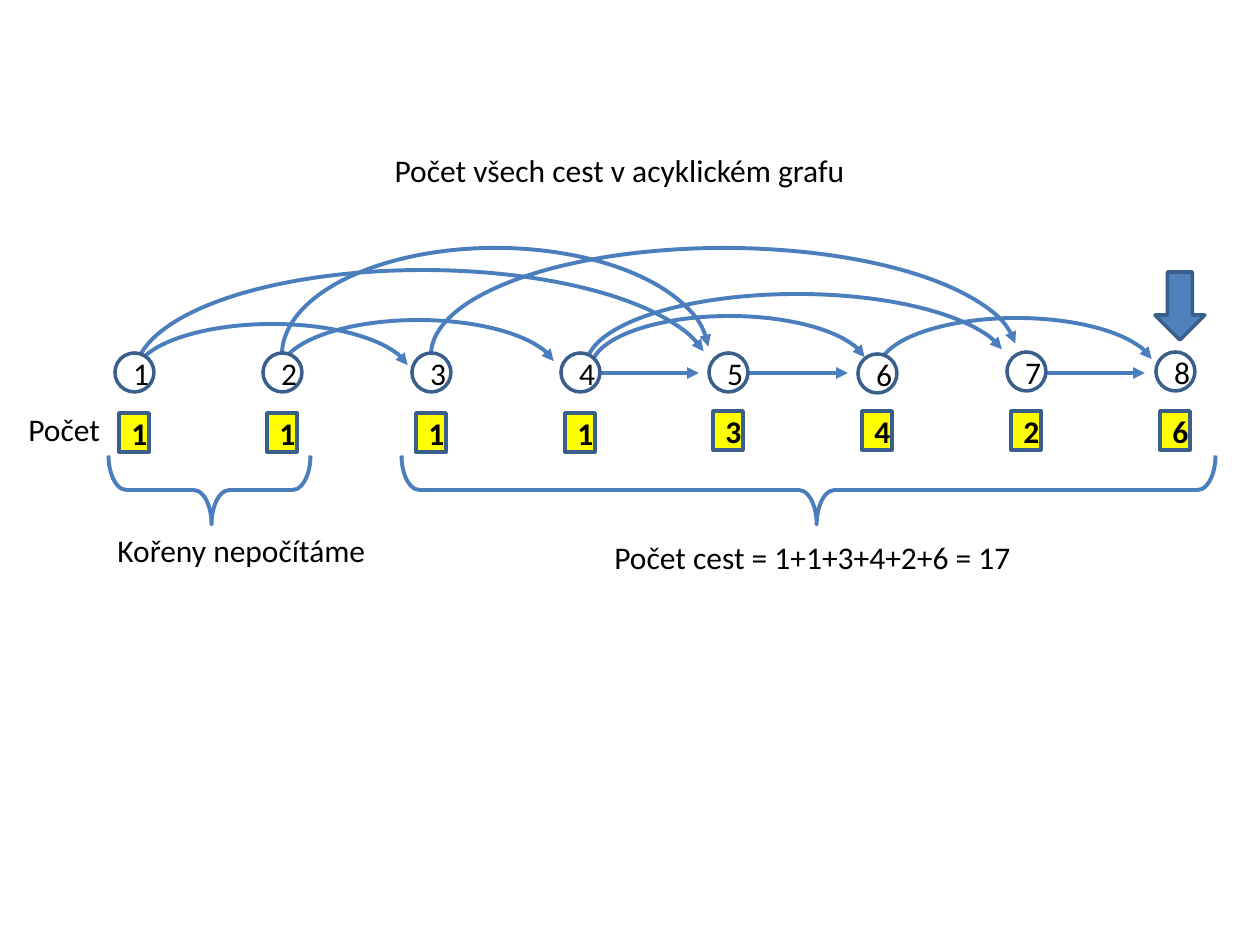
"""Build a slide that counts all paths in an acyclic graph."""
from lxml import etree
from pptx import Presentation
from pptx import util as u
from pptx.dml.color import RGBColor
from pptx.enum import shapes, text
from pptx.oxml import ns

SCALE = 914400 / 126
BLACK = RGBColor(0x00, 0x00, 0x00)
WHITE = RGBColor(0xFF, 0xFF, 0xFF)
YELLOW = RGBColor(0xFF, 0xFF, 0x00)
BLUE = RGBColor(0x4F, 0x81, 0xBD)
EDGE_BLUE = RGBColor(0x4B, 0x7E, 0xBC)
OUTLINE_BLUE = RGBColor(0x3A, 0x5F, 0x8C)
KIND = shapes.MSO_SHAPE


def write(shape, words, bold=False, align=text.PP_ALIGN.LEFT,
          anchor=text.MSO_ANCHOR.TOP, wrap=False):
    frame = shape.text_frame
    frame.word_wrap = wrap
    frame.vertical_anchor = anchor
    if not wrap:
        frame.auto_size = text.MSO_AUTO_SIZE.SHAPE_TO_FIT_TEXT
    paragraph = frame.paragraphs[0]
    paragraph.alignment = align
    run = paragraph.add_run()
    run.text = words
    run.font.name = "Calibri"
    run.font.size = u.Pt(18)
    run.font.bold = bold
    run.font.color.rgb = BLACK


def add_shape(kind, box, fill=None, line=OUTLINE_BLUE, width=2):
    shape = slide.shapes.add_shape(kind, *[round(n * SCALE) for n in box])
    shape.shadow.inherit = False
    if fill is None:
        shape.fill.background()
    else:
        shape.fill.solid()
        shape.fill.fore_color.rgb = fill
    shape.line.color.rgb = line
    shape.line.width = u.Pt(width)
    return shape


presentation = Presentation()
presentation.slide_width = u.Inches(10)
presentation.slide_height = u.Inches(7.5)
slide = presentation.slides.add_slide(presentation.slide_layouts[5])

title = slide.shapes.title
title.left, title.top, title.width, title.height = [
    round(n * SCALE) for n in (382, 145, 484, 50)]
write(title, "Počet všech cest v acyklickém grafu")

edges = []
for left, top, width, height, end in [
    (134, 324, 277, 105, 213.11),
    (135, 270, 576, 210, 213.11),
    (282, 248, 427, 214, 214.65),
    (878, 318, 277, 105, 213.11),
    (591, 316, 277, 105, 213.11),
    (431, 248, 586, 214, 214.65),
    (586, 294, 422, 145, 213.11),
    (280, 320, 277, 105, 213.11),
]:
    arc = add_shape(KIND.ARC, (left, top, width, height), line=EDGE_BLUE, width=2.25)
    arc.adjustments[0] = 108.25
    arc.adjustments[1] = end
    edges.append(arc)

for start, end in [(600, 699), (748, 848), (1047, 1145)]:
    connector = slide.shapes.add_connector(
        shapes.MSO_CONNECTOR.STRAIGHT,
        *[round(n * SCALE) for n in (start, 373, end, 373)])
    connector.line.color.rgb = EDGE_BLUE
    connector.line.width = u.Pt(2.25)
    etree.SubElement(connector._element.spPr, ns.qn("a:effectLst"))
    edges.append(connector)

for edge in edges:
    line = edge._element.spPr.find(ns.qn("a:ln"))
    etree.SubElement(line, ns.qn("a:tailEnd"), type="triangle")

node_tops = [353, 353, 353, 353, 353, 354, 352, 352]
path_counts = [1, 1, 1, 1, 3, 4, 2, 6]
for index, (top, count) in enumerate(zip(node_tops, path_counts)):
    left = 115 + 1041 * index // 7
    count_top = 413 if index < 4 else 411
    node = add_shape(KIND.OVAL, (left, top, 39, 39), WHITE)
    count_box = add_shape(KIND.RECTANGLE, (left + 4, count_top, 30, 39), YELLOW)
    for shape, value, bold in [(node, index + 1, False), (count_box, count, True)]:
        write(shape, str(value), bold=bold, align=text.PP_ALIGN.CENTER,
              anchor=text.MSO_ANCHOR.MIDDLE, wrap=True)

add_shape(KIND.DOWN_ARROW, (1155, 272, 50, 68), BLUE)

for box in [(774, 83, 69, 814), (175, 389, 69, 202)]:
    brace = add_shape(KIND.RIGHT_BRACE, box, line=EDGE_BLUE, width=2.25)
    brace.rotation = 90
    brace.adjustments[0] = 0.26
    brace.adjustments[1] = 0.49

for words, box in [
    ("Počet", (16, 404, 98, 50)),
    ("Počet cest = 1+1+3+4+2+6 = 17", (602, 532, 427, 50)),
    ("Kořeny nepočítáme", (105, 525, 276, 50)),
]:
    label = slide.shapes.add_textbox(*[round(n * SCALE) for n in box])
    write(label, words)

presentation.save("out.pptx")
